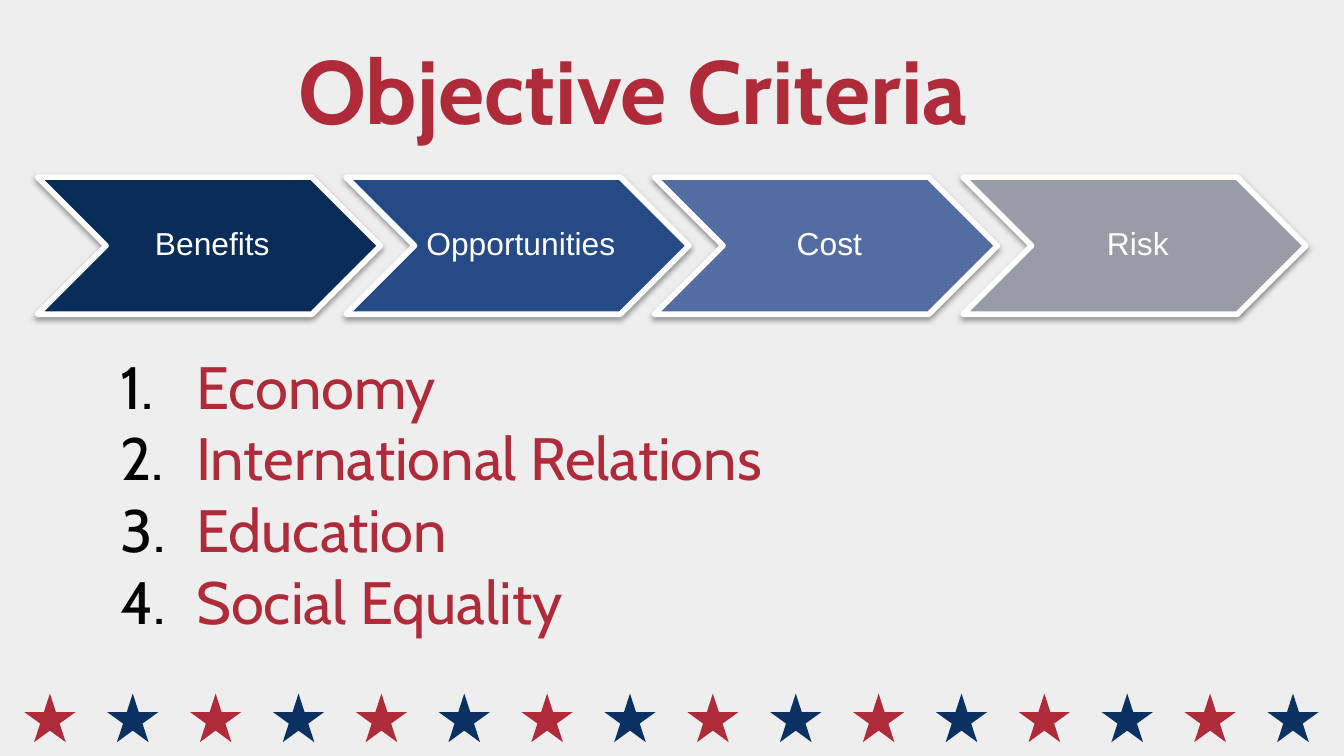
import math

import lxml.etree
import pptx
import pptx.dml.color
import pptx.enum.shapes
import pptx.enum.text
import pptx.oxml
import pptx.oxml.ns
import pptx.util

Cm = pptx.util.Cm
Pt = pptx.util.Pt
RGBColor = pptx.dml.color.RGBColor
PP_ALIGN = pptx.enum.text.PP_ALIGN
MSO_ANCHOR = pptx.enum.text.MSO_ANCHOR
qn = pptx.oxml.ns.qn

BACKGROUND = RGBColor(0xEE, 0xEE, 0xEE)
RED = RGBColor(0xAF, 0x2B, 0x39)
NAVY = RGBColor(0x0A, 0x31, 0x61)
WHITE = RGBColor(0xFF, 0xFF, 0xFF)
STEPS = [
    ("Benefits", RGBColor(0x09, 0x2C, 0x58)),
    ("Opportunities", RGBColor(0x25, 0x4A, 0x86)),
    ("Cost", RGBColor(0x53, 0x6C, 0xA1)),
    ("Risk", RGBColor(0x98, 0x9C, 0xA6)),
]
CRITERIA = ["Economy", "International Relations", "Education", "Social Equality"]

SHADOW = """<a:effectLst
  xmlns:a="http://schemas.openxmlformats.org/drawingml/2006/main">
  <a:outerShdw blurRad="39370" dist="20320" dir="5400000" rotWithShape="0">
    <a:srgbClr val="000000"><a:alpha val="38000"/></a:srgbClr>
  </a:outerShdw></a:effectLst>"""


def add_text(slide, box, lines, *, size, font, color, bold=False,
             align=PP_ALIGN.LEFT, anchor=MSO_ANCHOR.TOP, margins=None, spacing=None):
    """Add a text box with one paragraph per line; box and margins are in cm."""
    frame = slide.shapes.add_textbox(*map(Cm, box)).text_frame
    frame.word_wrap = True
    frame.vertical_anchor = anchor
    if margins:
        (frame.margin_left, frame.margin_top,
         frame.margin_right, frame.margin_bottom) = map(Cm, margins)
    frame.text = "\n".join(lines)
    for paragraph in frame.paragraphs:
        paragraph.alignment = align
        paragraph.line_spacing = spacing
        run_font = paragraph.runs[0].font
        run_font.size = Pt(size)
        run_font.name = font
        run_font.bold = bold
        run_font.color.rgb = color
    return frame


def add_star_row(slide, box, count):
    """Spread regular five-pointed stars, alternately red and navy, over the box."""
    left, top, width, height = box
    radius = height / (1 + math.cos(math.pi / 5))
    star_width = 2 * radius * math.sin(math.radians(72))
    pitch = (width - star_width) / (count - 1)
    for index in range(count):
        center_x = left + star_width / 2 + index * pitch
        points = []
        for corner in range(10):
            reach = radius * (0.38 if corner % 2 else 1)
            angle = corner * math.pi / 5
            points.append((Cm(center_x + reach * math.sin(angle)),
                           Cm(top + radius - reach * math.cos(angle))))
        builder = slide.shapes.build_freeform(*points[0])
        builder.add_line_segments(points[1:], close=True)
        star = builder.convert_to_shape()
        star.shadow.inherit = False
        star.fill.solid()
        star.fill.fore_color.rgb = NAVY if index % 2 else RED
        star.line.fill.background()


def add_chevron_process(slide, box, steps):
    left, top, width, height = box
    notch = height / 2
    overlap = 0.65
    chevron_width = (width + overlap * (len(steps) - 1)) / len(steps)
    for index, (label, color) in enumerate(steps):
        x = left + index * (chevron_width - overlap)
        chevron = slide.shapes.add_shape(
            pptx.enum.shapes.MSO_SHAPE.CHEVRON,
            Cm(x), Cm(top), Cm(chevron_width), Cm(height))
        chevron.fill.solid()
        chevron.fill.fore_color.rgb = color
        chevron.line.color.rgb = WHITE
        chevron.line.width = Pt(3)
        chevron.element.spPr.append(pptx.oxml.parse_xml(SHADOW))
        add_text(slide, (x + notch, top, chevron_width - 2 * notch, height), [label],
                 size=17, font="Arial", color=WHITE, align=PP_ALIGN.CENTER,
                 anchor=MSO_ANCHOR.MIDDLE, margins=(0.18, 0.05, 0.05, 0.05), spacing=0.9)


def add_title(slide, box, title):
    add_text(slide, box, [title], size=48, font="Cabin", color=RED, bold=True,
             align=PP_ALIGN.CENTER)


def add_numbered_list(slide, box, items):
    frame = add_text(slide, box, items, size=32, font="Cabin", color=RED)
    indent = Cm(1.43)
    for paragraph in frame.paragraphs:
        properties = paragraph._p.get_or_add_pPr()
        properties.set("marL", str(indent))
        properties.set("indent", str(-indent))
        number_color = lxml.etree.SubElement(properties, qn("a:buClr"))
        lxml.etree.SubElement(number_color, qn("a:srgbClr"), val="000000")
        lxml.etree.SubElement(properties, qn("a:buFont"), typeface="+mj-lt")
        lxml.etree.SubElement(properties, qn("a:buAutoNum"), type="arabicPeriod")


def main():
    presentation = pptx.Presentation()
    presentation.slide_width = Cm(25.4)
    presentation.slide_height = Cm(14.29)
    slide = presentation.slides.add_slide(presentation.slide_layouts[6])
    slide.background.fill.solid()
    slide.background.fill.fore_color.rgb = BACKGROUND

    add_star_row(slide, (0.46, 13.11, 24.46, 0.92), 16)
    add_chevron_process(slide, (0.71, 3.35, 23.97, 2.59), STEPS)
    add_title(slide, (3, 0.53, 18.31, 2.31), "Objective Criteria ")
    add_numbered_list(slide, (2.03, 6.48, 20.35, 6.12), CRITERIA)
    presentation.save("out.pptx")


if __name__ == "__main__":
    main()
